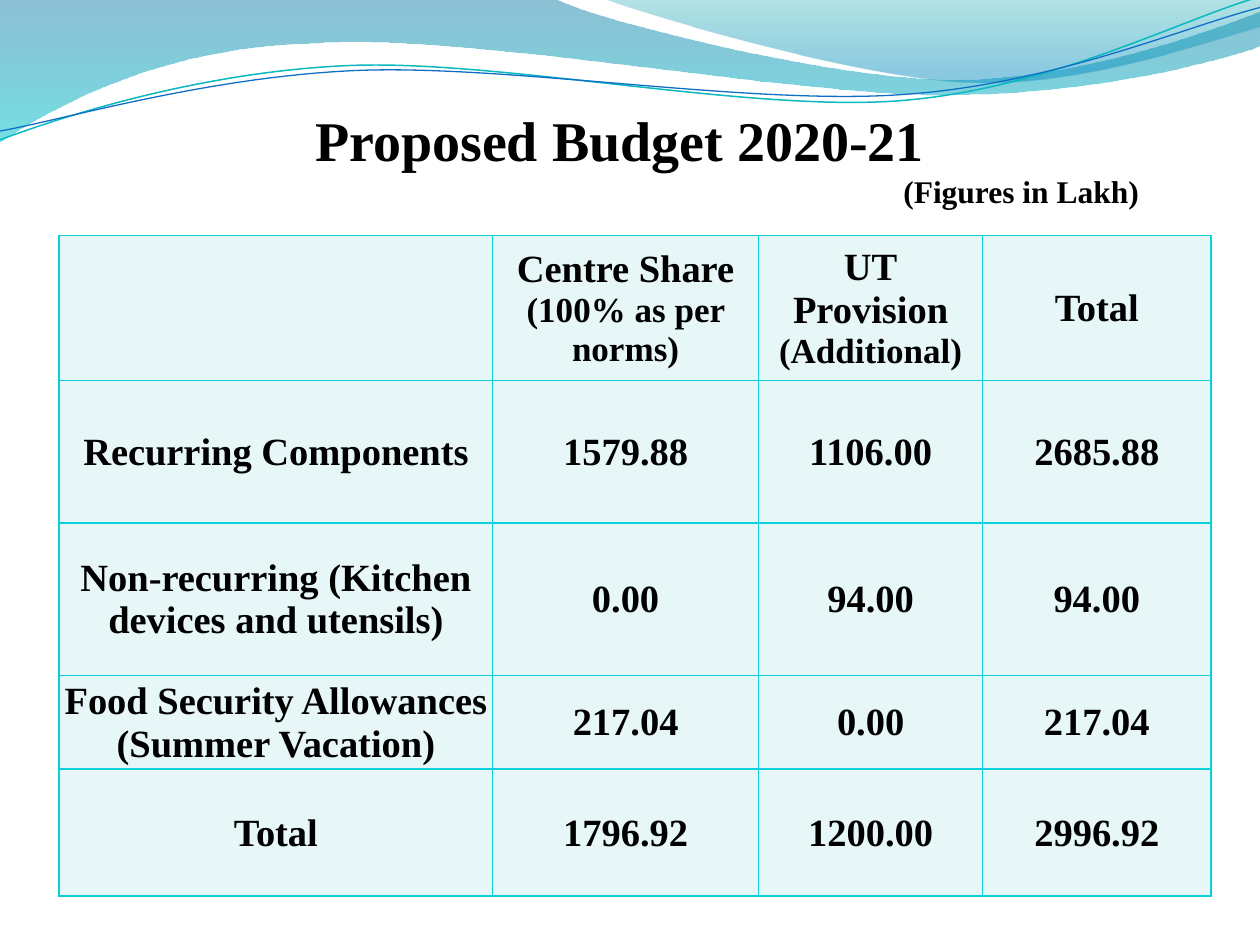
from math import cos, radians, sin

from lxml import etree
from pptx import Presentation
from pptx.dml.color import RGBColor
from pptx.enum.text import MSO_ANCHOR, MSO_AUTO_SIZE, PP_ALIGN
from pptx.oxml.ns import qn
from pptx.util import Inches, Pt

CENTER, RIGHT = PP_ALIGN.CENTER, PP_ALIGN.RIGHT
MIDDLE = MSO_ANCHOR.MIDDLE
GROW = MSO_AUTO_SIZE.SHAPE_TO_FIT_TEXT
TITLE_ONLY = 5
LINE_TILT = -2.7

# Each wave is a start point followed by segments:
# two numbers make a straight line, six a cubic curve.
BROAD_WAVE = [
    (0, 0), (4.4, -0.01),
    (4.76, 0.17, 6.64, 0.63, 7.58, 0.63), (8.53, 0.63, 9.58, 0.26, 10, 0.09),
    (10.01, 0.36),
    (9.83, 0.44, 8.7, 0.76, 7.46, 0.75), (6.22, 0.75, 3.82, 0.28, 2.57, 0.34),
    (1.29, 0.36, 0.46, 0.83, -0.01, 1.13)]
RIGHT_WAVE = [
    (4.79, -0.01),
    (5.09, 0.11, 6.82, 0.62, 7.69, 0.65), (8.56, 0.69, 9.61, 0.32, 10, 0.21),
    (10, 0)]
TEAL_LINE = [
    (0, 1.11),
    (0.48, 0.93, 1.58, 0.57, 2.77, 0.52), (3.95, 0.47, 5.93, 0.89, 7.13, 0.8),
    (8.33, 0.71, 9.38, 0.15, 9.98, -0.02)]
BLUE_LINE = [
    (0, 1.04),
    (0.47, 0.96, 1.64, 0.61, 2.83, 0.56), (4.03, 0.51, 5.97, 0.84, 7.17, 0.75),
    (8.36, 0.67, 9.41, 0.21, 10, 0.06)]

COLUMNS = [3.44, 2.11, 1.78, 1.81]
ROWS = [1.15, 1.13, 1.21, 0.74, 1.01]
# A cell is a list of paragraphs, a paragraph a list of (text, size) runs.
HEADER = [
    [],
    [[("Centre Share ", 22), ("(100% as per norms)", 20)]],
    [[("UT", 22)], [("Provision ", 22), ("(Additional)", 20)]],
    [[("Total", 22)]]]
BODY = [
    ["Recurring Components", "1579.88", "1106.00", "2685.88"],
    ["Non-recurring (Kitchen devices and utensils)", "0.00", "94.00", "94.00"],
    ["Food Security Allowances (Summer Vacation)", "217.04", "0.00", "217.04"],
    ["Total", "1796.92", "1200.00", "2996.92"]]


def rgb(color):
    return RGBColor.from_string(color)


def turn(outline, center, degrees):
    """Return the outline turned clockwise about the center."""
    cx, cy = center
    c, s = cos(radians(degrees)), sin(radians(degrees))
    turned = []
    for segment in outline:
        values = []
        for x, y in zip(segment[::2], segment[1::2]):
            values += [cx + (x - cx) * c - (y - cy) * s,
                       cy + (x - cx) * s + (y - cy) * c]
        turned.append(tuple(values))
    return turned


class BudgetSlide:
    font = "Times New Roman"
    text_color = "000000"
    cell_color = "E7F7F8"
    border_color = "0BD0D9"

    def __init__(self, prs):
        self.s = prs.slides.add_slide(prs.slide_layouts[TITLE_ONLY])

    def freeform(self, outline, close):
        """Add straight segments, then join each curve's three into one cubic."""
        start, *rest = [(Inches(x), Inches(y)) for segment in outline
                        for x, y in zip(segment[::2], segment[1::2])]
        builder = self.s.shapes.build_freeform(*start)
        builder.add_line_segments(rest, close=close)
        sp = builder.convert_to_shape()
        sp.shadow.inherit = False
        lines = iter(list(sp.element.iter(qn("a:lnTo"))))
        for segment in outline[1:]:
            line = next(lines)
            if len(segment) == 6:
                curve = etree.Element(qn("a:cubicBezTo"))
                line.addprevious(curve)
                for part in (line, next(lines), next(lines)):
                    curve.append(part[0])
                    part.getparent().remove(part)
        return sp

    def wave(self, outline, stops):
        """Add a filled wave; stops are (position, color, opacity in %)."""
        sp = self.freeform(outline, True)
        sp.line.fill.background()
        sp.fill.gradient()
        sp.fill.gradient_angle = 270
        for stop, (position, color, _) in zip(sp.fill.gradient_stops, stops):
            stop.position = position
            stop.color.rgb = rgb(color)
        for clr, (_, _, opacity) in zip(sp.element.iter(qn("a:srgbClr")), stops):
            etree.SubElement(clr, qn("a:alpha"), val=str(opacity * 1000))

    def wave_line(self, outline, center, color, width):
        """Add a curve as a level shape that is tilted into place."""
        sp = self.freeform(turn(outline, center, -LINE_TILT), False)
        sp.rotation = LINE_TILT
        sp.fill.background()
        sp.line.color.rgb = rgb(color)
        sp.line.width = Pt(width)

    def style(self, font, size=None):
        font.name = self.font
        font.bold = True
        font.color.rgb = rgb(self.text_color)
        if size:
            font.size = Pt(size)

    def title(self, box, lines):
        sp = self.s.shapes.title
        self.s.shapes.element.append(sp.element)  # in front of the waves
        sp.left, sp.top, sp.width, sp.height = map(Inches, box)
        tf = sp.text_frame
        tf.word_wrap = True
        tf.auto_size = GROW
        tf.vertical_anchor = MIDDLE
        tf.text = "\n".join(text for text, _, _ in lines)
        for p, (_, size, align) in zip(tf.paragraphs, lines):
            p.alignment = align
            self.style(p.font, size)

    def table(self, left, top, rows):
        frame = self.s.shapes.add_table(
            len(ROWS), len(COLUMNS), Inches(left), Inches(top),
            Inches(sum(COLUMNS)), Inches(sum(ROWS)))
        table = frame.table
        for column, width in zip(table.columns, COLUMNS):
            column.width = Inches(width)
        for row, height, contents in zip(table.rows, ROWS, rows):
            row.height = Inches(height)
            for cell, paragraphs in zip(row.cells, contents):
                self.cell(cell, paragraphs)

    def cell(self, cell, paragraphs):
        cell.fill.solid()
        cell.fill.fore_color.rgb = rgb(self.cell_color)
        cell.vertical_anchor = MIDDLE
        cell.margin_left = cell.margin_right = cell.margin_top = Inches(0.01)
        cell.margin_bottom = 0
        self.borders(cell)
        tf = cell.text_frame
        for i, runs in enumerate(paragraphs):
            p = tf.add_paragraph() if i else tf.paragraphs[0]
            p.alignment = CENTER
            self.style(p.font)
            for text, size in runs:
                r = p.add_run()
                r.text = text
                self.style(r.font, size)

    def borders(self, cell):
        tc_pr = cell._tc.get_or_add_tcPr()
        for i, side in enumerate(("lnL", "lnR", "lnT", "lnB")):
            ln = etree.Element(qn("a:" + side), w=str(Pt(1)))
            fill = etree.SubElement(ln, qn("a:solidFill"))
            etree.SubElement(fill, qn("a:srgbClr"), val=self.border_color)
            tc_pr.insert(i, ln)


def main():
    prs = Presentation()
    prs.slide_width, prs.slide_height = Inches(10), Inches(7.5)
    slide = BudgetSlide(prs)
    slide.wave(BROAD_WAVE, [(0, "0074A1", 45), (1, "00C6CF", 55)])
    slide.wave(RIGHT_WAVE, [(0, "00A1A9", 30), (0.8, "008BBF", 45)])
    slide.wave_line(TEAL_LINE, (4.99, 0.58), "0AB8BF", 0.85)
    slide.wave_line(BLUE_LINE, (5, 0.59), "0F6FC6", 0.75)
    slide.title((0.7, 0.78, 8.44, 0.94), [
        ("Proposed Budget 2020-21", 32, CENTER),
        ("(Figures in Lakh)", 18, RIGHT)])
    body = [[[[(text, 22)]] for text in row] for row in BODY]
    slide.table(0.47, 1.87, [HEADER] + body)
    prs.save("out.pptx")


if __name__ == "__main__":
    main()
